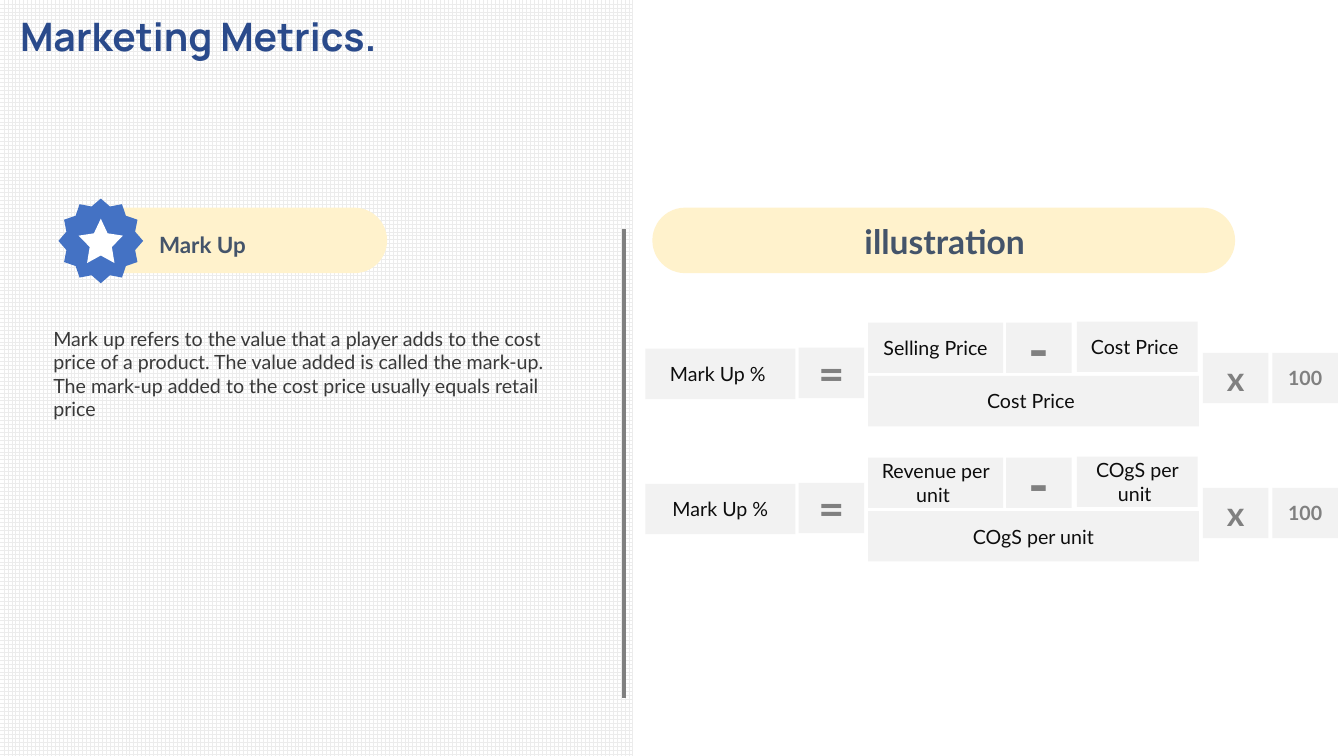
from dataclasses import dataclass

from lxml import etree
from pptx import Presentation
from pptx.dml.color import RGBColor
from pptx.enum.dml import MSO_PATTERN
from pptx.enum.shapes import MSO_CONNECTOR, MSO_SHAPE
from pptx.enum.text import MSO_ANCHOR, MSO_AUTO_SIZE, PP_ALIGN
from pptx.oxml.ns import qn
from pptx.shapes.autoshape import Shape
from pptx.util import Inches, Pt

RECT, PILL = MSO_SHAPE.RECTANGLE, MSO_SHAPE.ROUNDED_RECTANGLE
BADGE, STAR = MSO_SHAPE.STAR_12_POINT, MSO_SHAPE.STAR_5_POINT
GRID, STRAIGHT = MSO_PATTERN.LARGE_GRID, MSO_CONNECTOR.STRAIGHT
LEFT, CENTER = PP_ALIGN.LEFT, PP_ALIGN.CENTER
TOP, MIDDLE, BOTTOM = MSO_ANCHOR.TOP, MSO_ANCHOR.MIDDLE, MSO_ANCHOR.BOTTOM
GROW = MSO_AUTO_SIZE.SHAPE_TO_FIT_TEXT

COLORS = {
    "white": "FFFFFF", "grid": "ECECEC", "title": "2A4A8B", "body": "393939",
    "gray": "808080", "cream": "FFF2CC", "blue": "4472C4", "heading": "44546A",
    "cell": "F2F2F2", "term": "0D0D0D",
}
FORMATS = {
    "title": {"name": "Manrope", "size": Pt(28), "bold": True},
    "body": {"name": "Lato", "size": Pt(14), "bold": False},
    "label": {"name": "Lato", "size": Pt(16), "bold": True},
    "heading": {"name": "Lato", "size": Pt(24), "bold": True},
    "equals": {"name": "Lato", "size": Pt(32), "bold": True},
    "minus": {"name": "Lato", "size": Pt(40), "bold": True},
    "times": {"name": "Lato", "size": Pt(24), "bold": True},
    "hundred": {"name": "Lato", "size": Pt(14), "bold": True},
}
CELL_HEIGHT = 0.5
OPERATOR_WIDTH = 0.65


@dataclass(frozen=True)
class Box:
    left: float
    top: float
    width: float
    height: float

    def lengths(self) -> list[int]:
        return [Inches(v) for v in (self.left, self.top, self.width, self.height)]


@dataclass(frozen=True)
class Formula:
    top: float
    result: str
    minuend: str
    subtrahend: str
    divisor: str
    times_anchor: MSO_ANCHOR


@dataclass(frozen=True)
class Cell:
    text: str
    left: float
    drop: float
    width: float = OPERATOR_WIDTH
    style: str = "body"
    color: str = "term"
    anchor: MSO_ANCHOR = MIDDLE


def rgb(color: str) -> RGBColor:
    return RGBColor.from_string(COLORS[color])


def write(shape: Shape, text: str, style: str, color: str,
          align: PP_ALIGN, anchor: MSO_ANCHOR) -> None:
    frame = shape.text_frame
    frame.word_wrap = True
    frame.vertical_anchor = anchor
    paragraph = frame.paragraphs[0]
    paragraph.alignment = align
    run = paragraph.add_run()
    run.text = text
    for attribute, value in FORMATS[style].items():
        setattr(run.font, attribute, value)
    run.font.color.rgb = rgb(color)


def add_block(shapes, kind: MSO_SHAPE, box: Box, color: str,
              adjustment: float | None = None) -> Shape:
    block = shapes.add_shape(kind, *box.lengths())
    block.shadow.inherit = False
    block.fill.solid()
    block.fill.fore_color.rgb = rgb(color)
    block.line.fill.background()
    if adjustment is not None:
        block.adjustments[0] = adjustment
    return block


def add_text(shapes, box: Box, text: str, style: str, color: str,
             align: PP_ALIGN = LEFT, anchor: MSO_ANCHOR = TOP) -> None:
    caption = shapes.add_textbox(*box.lengths())
    write(caption, text, style, color, align, anchor)
    caption.text_frame.auto_size = GROW


def add_formula(shapes, formula: Formula) -> None:
    cells = (
        Cell("=", 7.92, 0.25, style="equals", color="gray"),
        Cell(formula.result, 6.4, 0.26, 1.49),
        Cell(formula.minuend, 8.61, 0, 1.34),
        Cell(formula.subtrahend, 10.68, -0.01, 1.2),
        Cell(formula.divisor, 8.61, 0.53, 3.28),
        Cell("-", 9.98, 0, style="minus", color="gray"),
        Cell("x", 11.93, 0.3, style="times", color="gray", anchor=formula.times_anchor),
        Cell("100", 12.62, 0.3, style="hundred", color="gray"),
    )
    for cell in cells:
        box = Box(cell.left, formula.top + cell.drop, cell.width, CELL_HEIGHT)
        block = add_block(shapes, RECT, box, "cell")
        write(block, cell.text, cell.style, cell.color, CENTER, cell.anchor)


def main() -> None:
    deck = Presentation()
    deck.slide_width, deck.slide_height = Inches(13.33), Inches(7.5)
    slide = deck.slides.add_slide(deck.slide_layouts[6])
    shapes = slide.shapes

    # Left panel with title and definition
    panel = add_block(shapes, RECT, Box(0, 0, 6.28, 7.5), "white")
    panel.fill.patterned()
    panel.fill.pattern = GRID
    panel.fill.fore_color.rgb = rgb("grid")
    panel.fill.back_color.rgb = rgb("white")
    add_text(shapes, Box(0.1, 0.07, 4.22, 0.57), "Marketing Metrics.", "title", "title")
    definition = (
        "Mark up refers to the value that a player adds to the cost price of a product. "
        "The value added is called the mark-up. "
        "The mark-up added to the cost price usually equals retail price"
    )
    add_text(shapes, Box(0.43, 3.19, 5.25, 1.04), definition, "body", "body")

    # Divider
    divider = shapes.add_connector(
        STRAIGHT, Inches(6.19), Inches(2.27), Inches(6.19), Inches(6.92))
    divider.line.color.rgb = rgb("gray")
    divider.line.width = Pt(3)
    etree.SubElement(divider.line._get_or_add_ln().getparent(), qn("a:effectLst"))

    # Metric name with star badge
    metric = shapes.add_group_shape().shapes
    add_block(metric, PILL, Box(0.78, 2.06, 3.06, 0.65), "cream", 0.5)
    add_block(metric, BADGE, Box(0.58, 1.97, 0.84, 0.84), "blue", 0.42)
    add_block(metric, STAR, Box(0.78, 2.17, 0.44, 0.44), "white", 0.25)
    add_text(metric, Box(1.48, 2.24, 2.16, 0.37), "Mark Up", "label", "heading",
             anchor=MIDDLE)

    # Illustration heading
    heading = shapes.add_group_shape().shapes
    add_block(heading, PILL, Box(6.47, 2.06, 5.78, 0.65), "cream", 0.5)
    add_text(heading, Box(6.71, 2.14, 5.32, 0.5), "illustration", "heading", "heading",
             CENTER, BOTTOM)

    # Formulas
    formulas = (
        Formula(3.2, "Mark Up % ", "Selling Price", "Cost Price ", "Cost Price ", MIDDLE),
        Formula(4.54, "Mark Up %", "Revenue per unit ", "COgS per unit ",
                "COgS per unit", BOTTOM),
    )
    for formula in formulas:
        add_formula(shapes, formula)

    deck.save("out.pptx")


if __name__ == "__main__":
    main()
